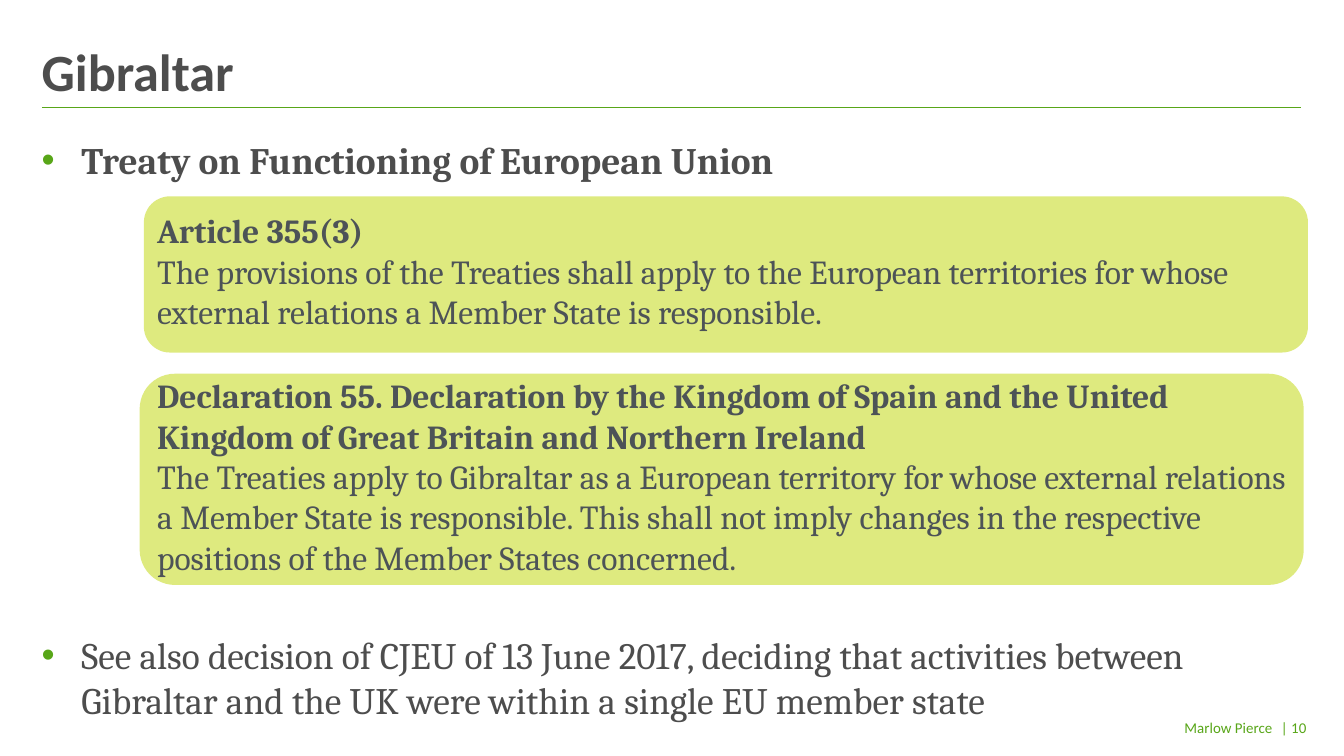
from lxml import etree
from pptx import Presentation
from pptx import util as u
from pptx.dml import color
from pptx.enum import shapes, text
from pptx.oxml import ns

GREEN, LIME, GREY, SLATE = "58A618", "BED600", "4D4D4D", "4D5357"
LEFT, WIDTH = 0.79, 23.8
PANEL_LEFT, PANEL_WIDTH = 2.72, 22


def rgb(value):
    return color.RGBColor.from_string(value)


def child(parent, tag, **attributes):
    return etree.SubElement(parent, ns.qn(tag), attributes)


def write(para, words, font="Cambria", size=18, ink=SLATE, bold=False):
    span = para.add_run()
    span.text = words
    span.font.name = font
    span.font.size = u.Pt(size)
    span.font.bold = bold
    span.font.color.rgb = rgb(ink)


class Slide:
    def __init__(self, deck):
        self.page = deck.slides.add_slide(deck.slide_layouts[6])

    def rule(self, left, top, right):
        line = self.page.shapes.add_connector(
            shapes.MSO_CONNECTOR.STRAIGHT, u.Cm(left), u.Cm(top), u.Cm(right), u.Cm(top))
        line.line.color.rgb = rgb(GREEN)
        line.line.width = u.Pt(0.5)
        child(line._element.spPr, "a:effectLst")

    def panel(self, left, top, width, height):
        box = self.page.shapes.add_shape(
            shapes.MSO_SHAPE.ROUNDED_RECTANGLE,
            u.Cm(left), u.Cm(top), u.Cm(width), u.Cm(height))
        box.shadow.inherit = False
        box.fill.solid()
        box.fill.fore_color.rgb = rgb(LIME)
        box.line.fill.background()
        child(box._element.spPr.find(".//" + ns.qn("a:srgbClr")), "a:alpha", val="50000")

    def frame(self, left, top, width, height, anchor=text.MSO_ANCHOR.TOP,
              sides=(0.25, 0.25), ends=0.13):
        box = self.page.shapes.add_textbox(
            u.Cm(left), u.Cm(top), u.Cm(width), u.Cm(height))
        frame = box.text_frame
        frame.word_wrap = True
        frame.vertical_anchor = anchor
        frame.margin_left, frame.margin_right = map(u.Cm, sides)
        frame.margin_top = frame.margin_bottom = u.Cm(ends)
        return frame

    def title(self, words):
        frame = self.frame(LEFT, 0.79, WIDTH, 1.24, text.MSO_ANCHOR.BOTTOM, (0, 0), 0.1)
        write(frame.paragraphs[0], words, font="Calibri", size=28, ink=GREY, bold=True)

    def quote(self, top, height, heading, passage):
        frame = self.frame(PANEL_LEFT, top, PANEL_WIDTH, height)
        write(frame.paragraphs[0], heading, bold=True)
        write(frame.add_paragraph(), passage)

    def bullets(self, top, height, items):
        frame = self.frame(LEFT, top, WIDTH, height, sides=(0, 0), ends=0.1)
        for index, (words, bold, gap) in enumerate(items):
            para = frame.add_paragraph() if index else frame.paragraphs[0]
            para.space_before, para.space_after = u.Pt(gap), u.Pt(9)
            layout = para._p.get_or_add_pPr()
            layout.set("marL", str(u.Cm(0.75)))
            layout.set("indent", str(u.Cm(-0.75)))
            child(child(layout, "a:buClr"), "a:srgbClr", val=GREEN)
            child(layout, "a:buFont", typeface="Arial")
            child(layout, "a:buChar", char="•")
            write(para, words, size=20, ink=GREY, bold=bold)

    def footer(self, left, width, words, right_inset=0):
        frame = self.frame(left, 13.44, width, 0.61, text.MSO_ANCHOR.MIDDLE, (0, right_inset))
        para = frame.paragraphs[0]
        para.alignment = text.PP_ALIGN.RIGHT
        write(para, words, font="Calibri", size=8, ink=GREEN)


def main():
    deck = Presentation()
    deck.slide_width, deck.slide_height = u.Cm(25.4), u.Cm(14.28)
    slide = Slide(deck)
    slide.rule(LEFT, 2.03, LEFT + WIDTH)
    slide.panel(2.64, 7.06, PANEL_WIDTH, 3.99)
    slide.panel(PANEL_LEFT, 3.71, PANEL_WIDTH, 2.95)
    slide.footer(24.1, 0.84, "| 10", right_inset=0.25)
    slide.footer(16, 8.05, "Marlow Pierce")
    slide.bullets(2.49, 10.95, [
        ("Treaty on Functioning of European Union", True, 0),
        ("See also decision of CJEU of 13 June 2017, deciding that activities between "
         "Gibraltar and the UK were within a single EU member state", False, 232),
    ])
    slide.title("Gibraltar")
    slide.quote(
        6.96, 4.11,
        "Declaration 55. Declaration by the Kingdom of Spain and the United Kingdom "
        "of Great Britain and Northern Ireland",
        "The Treaties apply to Gibraltar as a European territory for whose external "
        "relations a Member State is responsible. This shall not imply changes in the "
        "respective positions of the Member States concerned.")
    slide.quote(
        3.84, 2.57,
        "Article 355(3)",
        "The provisions of the Treaties shall apply to the European territories for "
        "whose external relations a Member State is responsible.")
    deck.save("out.pptx")


if __name__ == "__main__":
    main()
